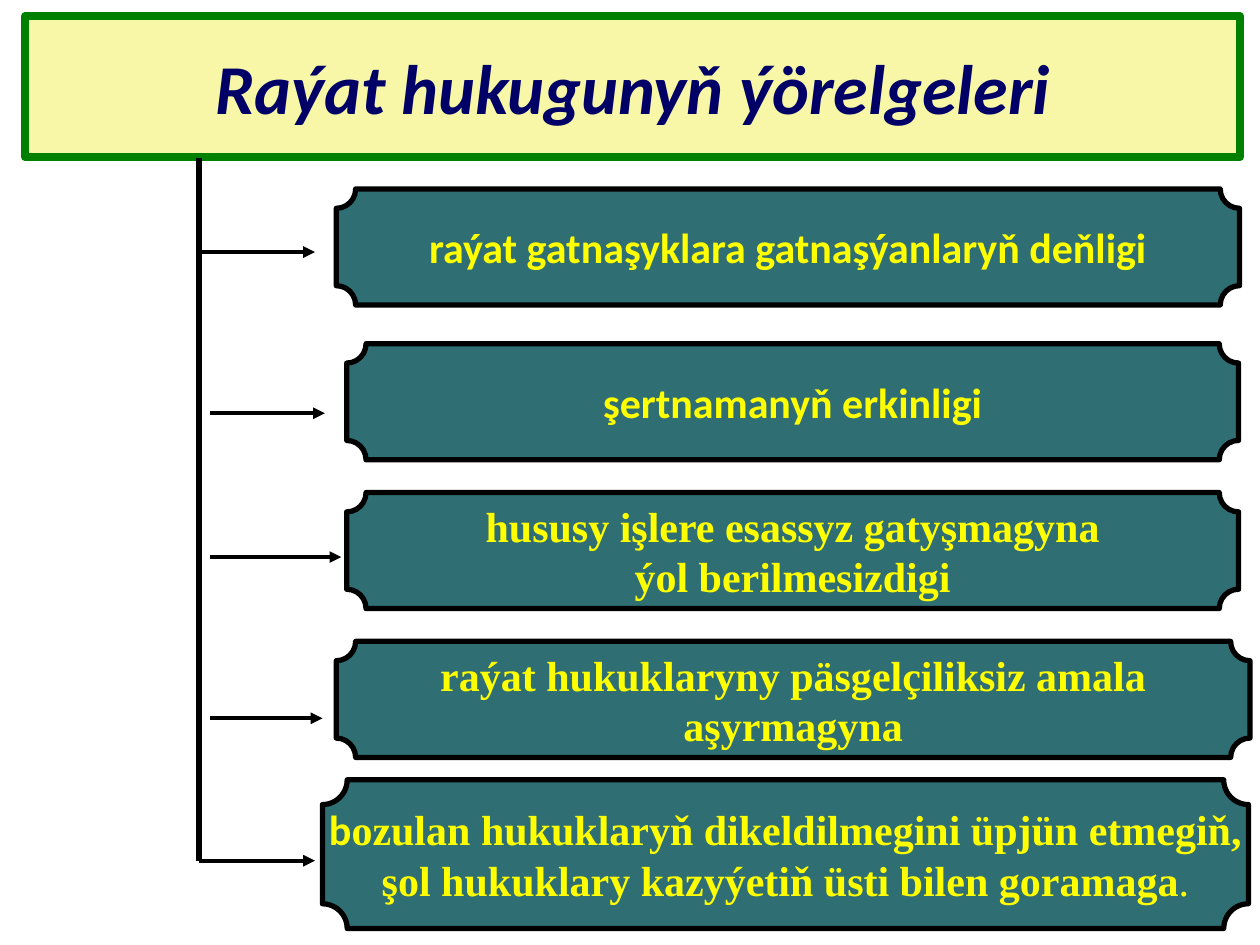
from dataclasses import dataclass

from lxml import etree
from pptx import Presentation
from pptx import util as u
from pptx.dml.color import RGBColor
from pptx.enum import shapes, text
from pptx.oxml.ns import qn


@dataclass(frozen=True)
class Theme:
    cream: str = "F7F7A7"
    green: str = "008000"
    navy: str = "000066"
    teal: str = "2F6E73"
    yellow: str = "FFFF00"
    black: str = "000000"
    sans: str = "Calibri"
    serif: str = "Times New Roman"
    head: int = 40
    body: int = 24


T = Theme()
KIND = shapes.MSO_SHAPE
TRUNK = 4.01   # x of the vertical line
INSET = 4.24   # x where the inner arrows start

# Each principle: box in cm, then lines made of (text, format) runs
BOXES = [
    ((6.78, 3.81, 18.21, 2.34),
     [[("raýat gatnaşyklara gatnaşýanlaryň deňligi", {"font": T.sans})]]),
    ((6.99, 6.93, 17.98, 2.34),
     [[("şertnamanyň erkinligi", {"font": T.sans})]]),
    ((6.99, 9.93, 17.98, 2.34),
     [[("hususy işlere esassyz gatyşmagyna", {})],
      [("ýol berilmesizdigi", {})]]),
    ((6.78, 12.93, 18.42, 2.34),
     [[("raýat hukuklaryny päsgelçiliksiz amala", {})],
      [("aşyrmagyna", {})]]),
    ((6.5, 15.72, 18.67, 3),
     [[("b", {"font": T.sans}),
       ("ozulan hukuklaryň dikeldilmegini üpjün etmegiň,", {})],
      [("şol hukuklary kazyýetiň üsti bilen goramaga", {}),
       (".", {"bold": False})]]),
]

# Arrows: start x, end x, y in cm
ARROWS = [(TRUNK, 6.35, 5.08), (INSET, 6.55, 8.33), (INSET, 6.88, 11.23),
          (INSET, 6.5, 14.48), (TRUNK, 6.35, 17.35)]


def rgb(code):
    return RGBColor.from_string(code)


def write(para, words, font=T.serif, size=T.body, color=T.yellow,
          bold=True, slant=False):
    run = para.add_run()
    run.text = words
    face = run.font
    face.name, face.size = font, u.Pt(size)
    face.bold, face.italic = bold, slant
    face.color.rgb = rgb(color)


def panel(slide, kind, place, fill, edge, width, lines, wrap=False):
    box = slide.shapes.add_shape(kind, *map(u.Cm, place))
    box.shadow.inherit = False
    box.fill.solid()
    box.fill.fore_color.rgb = rgb(fill)
    box.line.color.rgb = rgb(edge)
    box.line.width = u.Pt(width)
    frame = box.text_frame
    frame.word_wrap = wrap
    frame.vertical_anchor = text.MSO_ANCHOR.MIDDLE
    for i, runs in enumerate(lines):
        para = frame.add_paragraph() if i else frame.paragraphs[0]
        para.alignment = text.PP_ALIGN.CENTER
        for words, style in runs:
            write(para, words, **style)


def rule(slide, start, end, width, arrow=False):
    line = slide.shapes.add_connector(
        shapes.MSO_CONNECTOR.STRAIGHT, *map(u.Cm, start + end))
    line.line.color.rgb = rgb(T.black)
    line.line.width = u.Pt(width)
    if arrow:
        etree.SubElement(line.line._get_or_add_ln(), qn("a:tailEnd"),
                         type="triangle")
    etree.SubElement(line._element.spPr, qn("a:effectLst"))


def main():
    deck = Presentation()
    deck.slide_width, deck.slide_height = u.Cm(25.4), u.Cm(19.05)
    slide = deck.slides.add_slide(deck.slide_layouts[6])

    # Heading
    style = {"font": T.sans, "size": T.head, "color": T.navy, "slant": True}
    panel(slide, KIND.RECTANGLE, (0.51, 0.33, 24.49, 2.84), T.cream, T.green,
          4.5, [[("Raýat hukugunyň ýörelgeleri", style)]], wrap=True)

    # Principles
    for place, lines in BOXES:
        panel(slide, KIND.PLAQUE, place, T.teal, T.black, 3, lines)

    # Trunk and its arrows
    rule(slide, (TRUNK, 3.18), (TRUNK, 17.35), 3)
    for left, right, y in ARROWS:
        rule(slide, (left, y), (right, y), 2.25, arrow=True)

    deck.save("out.pptx")


if __name__ == "__main__":
    main()
